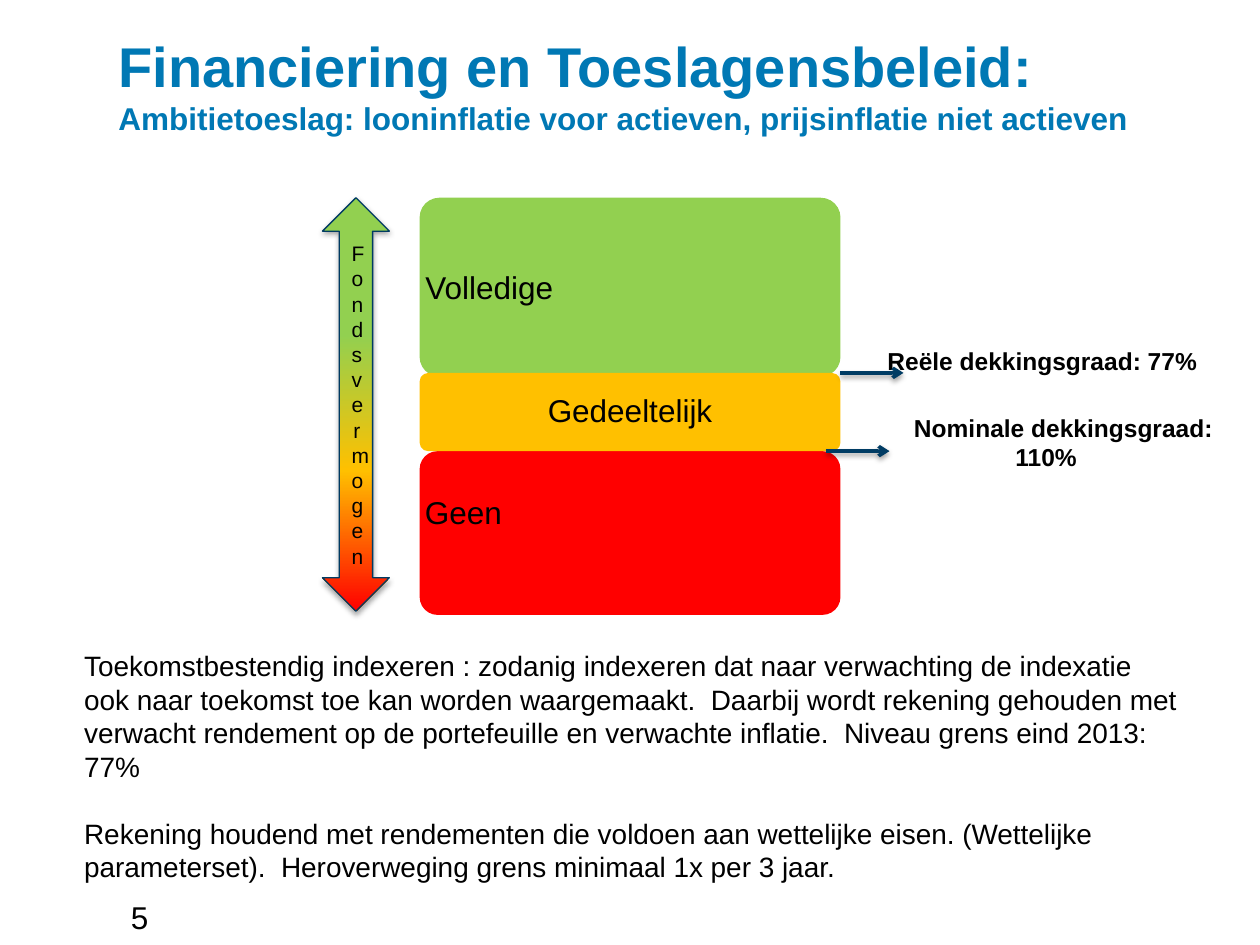
"""Build the slide on funding and indexation policy."""
from lxml import etree
from pptx import Presentation
from pptx import oxml
from pptx import util as u
from pptx.dml.color import RGBColor
from pptx.enum import shapes, text
from pptx.oxml import ns

Pt = u.Pt
COLORS = {"title": "0078B4", "text": "000000", "full": "92D050", "partial": "FFC000",
          "none": "FF0000", "outline": "003B62", "pointer": "003C64"}
LEFT, CENTER, RIGHT = text.PP_ALIGN.LEFT, text.PP_ALIGN.CENTER, text.PP_ALIGN.RIGHT


def write(para, words, size, color="text", bold=False, align=LEFT):
    para.alignment = align
    span = para.add_run()
    span.text = words
    span.font.name = "Arial"
    span.font.size = Pt(size)
    span.font.bold = bold
    span.font.color.rgb = RGBColor.from_string(COLORS[color])


def add_shadow(item, opacity, distance):
    properties = item._element.spPr
    for old in properties.findall(ns.qn("a:effectLst")):
        properties.remove(old)
    properties.append(oxml.parse_xml(
        f'<a:effectLst {ns.nsdecls("a")}><a:outerShdw blurRad="{Pt(3.1)}" dist="{Pt(distance)}" '
        f'dir="5400000" rotWithShape="0"><a:srgbClr val="000000"><a:alpha val="{opacity * 1000}"/>'
        '</a:srgbClr></a:outerShdw></a:effectLst>'))


deck = Presentation()
deck.slide_width, deck.slide_height = Pt(720), Pt(540)
page = deck.slides.add_slide(deck.slide_layouts[5])

title = page.shapes.title
title.left, title.top, title.width, title.height = Pt(41), Pt(15), Pt(657), Pt(60.5)
frame = title.text_frame
frame.auto_size = text.MSO_AUTO_SIZE.NONE
frame.vertical_anchor = text.MSO_ANCHOR.TOP
frame.margin_left = frame.margin_right = frame.margin_bottom = 0
frame.margin_top = Pt(3)
heading = frame.paragraphs[0]
heading._p.get_or_add_pPr().set("marL", str(Pt(26.7)))
write(heading, "Financiering en Toeslagensbeleid:", 32, "title", True)
write(frame.add_paragraph(), "Ambitietoeslag: looninflatie voor actieven, prijsinflatie niet actieven",
      18, "title", True)

zones = [("Volledige", "full", 113, 102.2, LEFT, 0),
         ("Geen", "none", 257.8, 93.6, LEFT, 24),
         ("Gedeeltelijk", "partial", 213.1, 44.7, CENTER, 3)]
for words, color, top, height, align, bottom in zones:
    zone = page.shapes.add_shape(shapes.MSO_SHAPE.ROUNDED_RECTANGLE,
                                 Pt(239.8), Pt(top), Pt(240.5), Pt(height))
    zone.adjustments[0] = 0.11
    zone.shadow.inherit = False
    zone.fill.solid()
    zone.fill.fore_color.rgb = RGBColor.from_string(COLORS[color])
    zone.line.fill.background()
    frame = zone.text_frame
    frame.margin_left = frame.margin_right = frame.margin_top = 0
    frame.margin_bottom = Pt(bottom)
    frame.vertical_anchor = text.MSO_ANCHOR.MIDDLE
    write(frame.paragraphs[0], words, 18, align=align)

labels = [("Reële dekkingsgraad: 77% ", 198.7, 236.2, 14.4, 0),
          ("Nominale dekkingsgraad: 110% ", 236.2, 240.5, 33.1, 16)]
for words, top, width, height, indent in labels:
    label = page.shapes.add_shape(shapes.MSO_SHAPE.ROUNDED_RECTANGLE,
                                  Pt(479.5), Pt(top), Pt(width), Pt(height))
    label.shadow.inherit = False
    label.fill.background()
    label.line.fill.background()
    frame = label.text_frame
    frame.margin_left = frame.margin_right = Pt(8)
    frame.vertical_anchor = text.MSO_ANCHOR.MIDDLE
    frame.paragraphs[0]._p.get_or_add_pPr().set("indent", str(Pt(indent)))
    write(frame.paragraphs[0], words, 14, bold=True, align=CENTER)

capital = page.shapes.add_shape(shapes.MSO_SHAPE.UP_DOWN_ARROW,
                                Pt(184.3), Pt(113), Pt(38.2), Pt(236.2))
capital.fill.gradient()
capital.fill.gradient_angle = 270
stops = capital._element.spPr.find(".//" + ns.qn("a:gsLst"))
for stop in list(stops):
    stops.remove(stop)
for position, color in [(33, "full"), (66, "partial"), (100, "none")]:
    stop = etree.SubElement(stops, ns.qn("a:gs"), pos=str(position * 1000))
    etree.SubElement(stop, ns.qn("a:srgbClr"), val=COLORS[color])
capital.line.color.rgb = RGBColor.from_string(COLORS["outline"])
capital.line.width = Pt(0.75)
add_shadow(capital, 35, 1.8)
capital.text_frame.vertical_anchor = text.MSO_ANCHOR.MIDDLE
write(capital.text_frame.paragraphs[0], "Fondsvermogen", 12, align=RIGHT)

for left, top in [(480.3, 213.1), (472.3, 257.8)]:
    pointer = page.shapes.add_connector(shapes.MSO_CONNECTOR.STRAIGHT,
                                        Pt(left), Pt(top), Pt(left + 36), Pt(top))
    pointer.line.color.rgb = RGBColor.from_string(COLORS["pointer"])
    pointer.line.width = Pt(2)
    etree.SubElement(pointer.line._get_or_add_ln(), ns.qn("a:tailEnd"), type="arrow")
    add_shadow(pointer, 38, 1.6)

notes = [
    "Toekomstbestendig indexeren : zodanig indexeren dat naar verwachting de indexatie ook naar "
    "toekomst toe kan worden waargemaakt.  Daarbij wordt rekening gehouden met verwacht rendement "
    "op de portefeuille en verwachte inflatie.  Niveau grens eind 2013: 77%",
    "Rekening houdend met rendementen die voldoen aan wettelijke eisen. (Wettelijke parameterset).  "
    "Heroverweging grens minimaal 1x per 3 jaar."]
boxes = [(notes, 16, 41, 367.2, 639.4, 143.3), (["5"], 18, 67.7, 509.8, 55.4, 30.2)]
for lines, size, left, top, width, height in boxes:
    box = page.shapes.add_textbox(Pt(left), Pt(top), Pt(width), Pt(height))
    frame = box.text_frame
    frame.word_wrap = True
    for index, words in enumerate(lines):
        para = frame.add_paragraph() if index else frame.paragraphs[0]
        if index:
            para.space_before = Pt(19)
        write(para, words, size)

deck.save("out.pptx")
